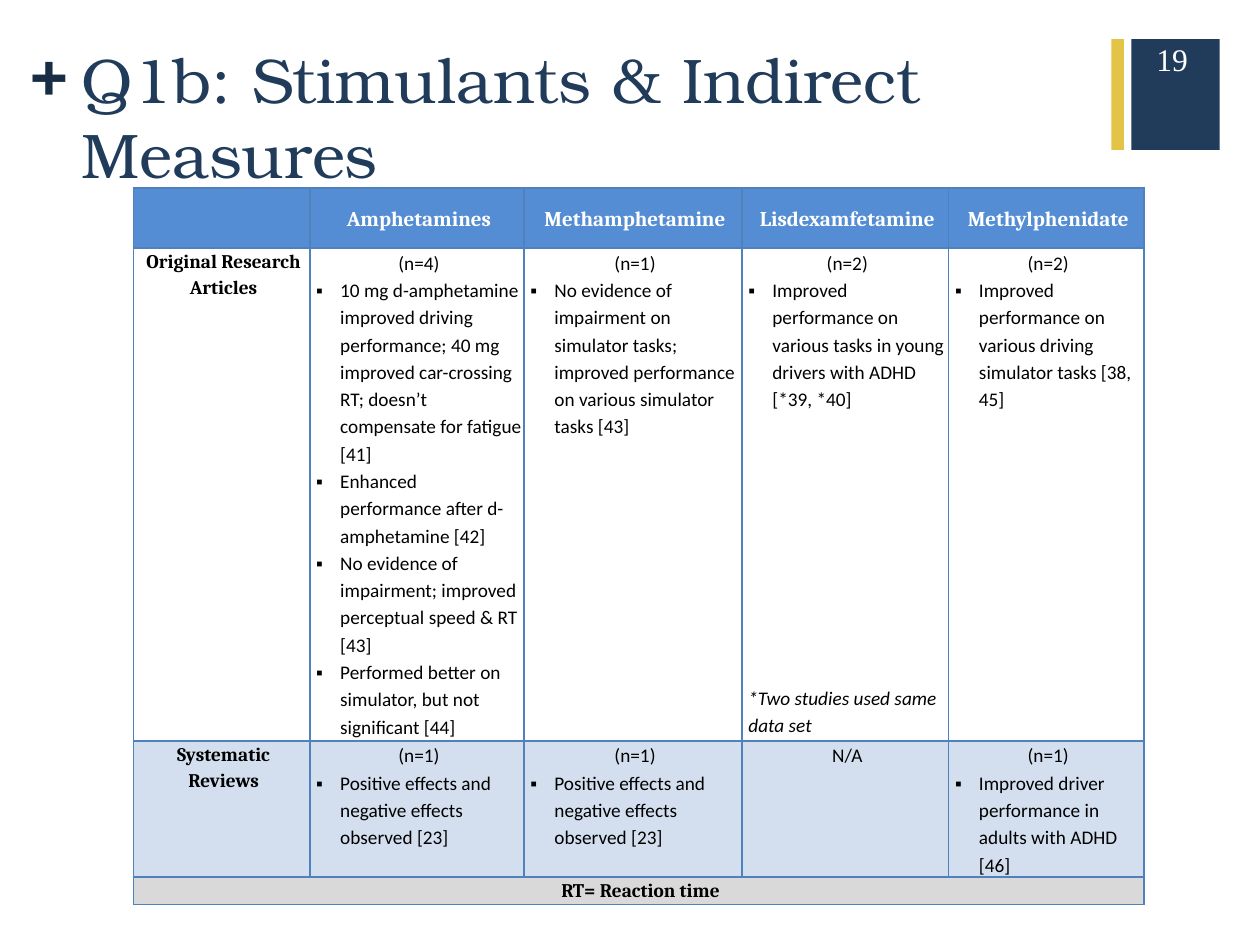
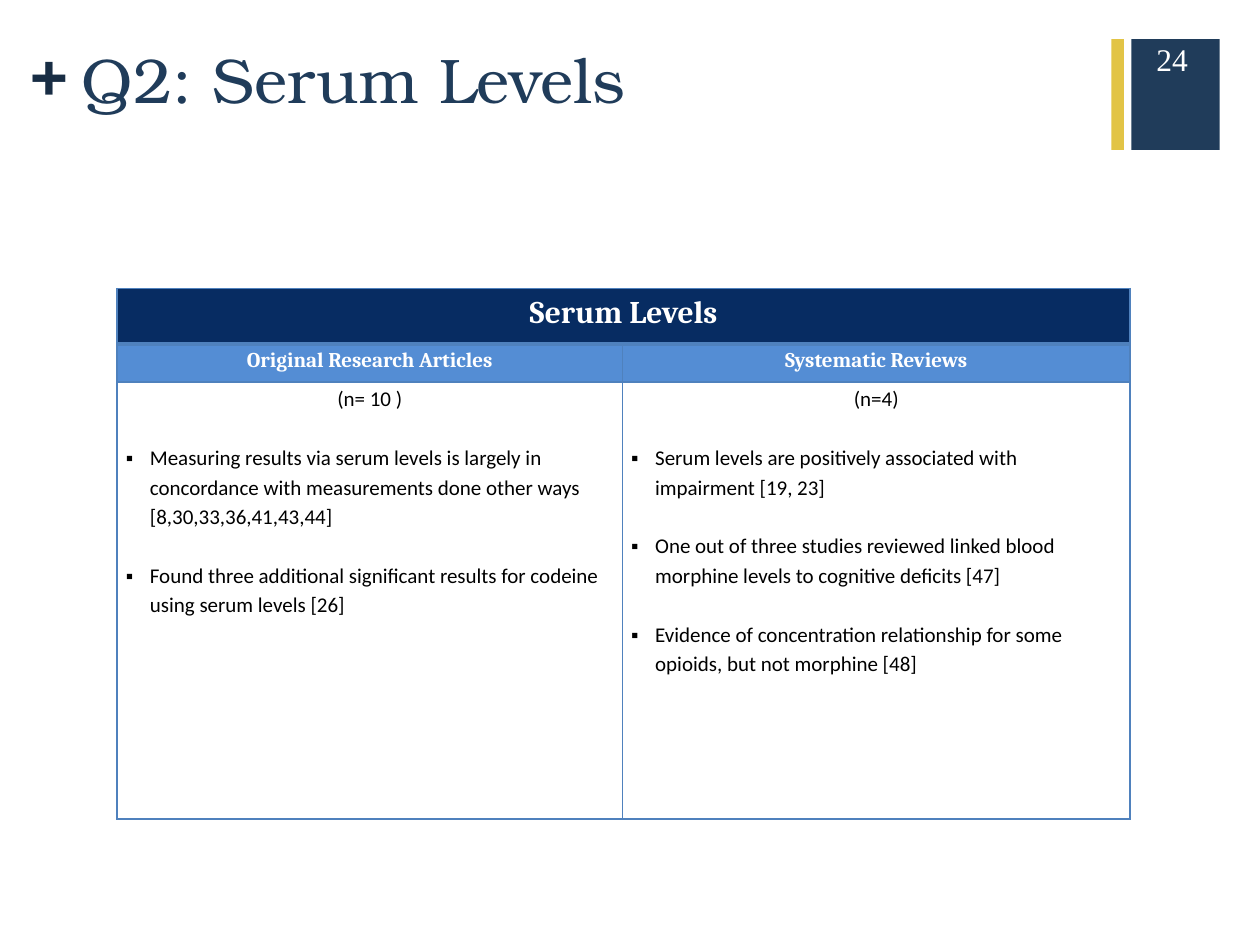
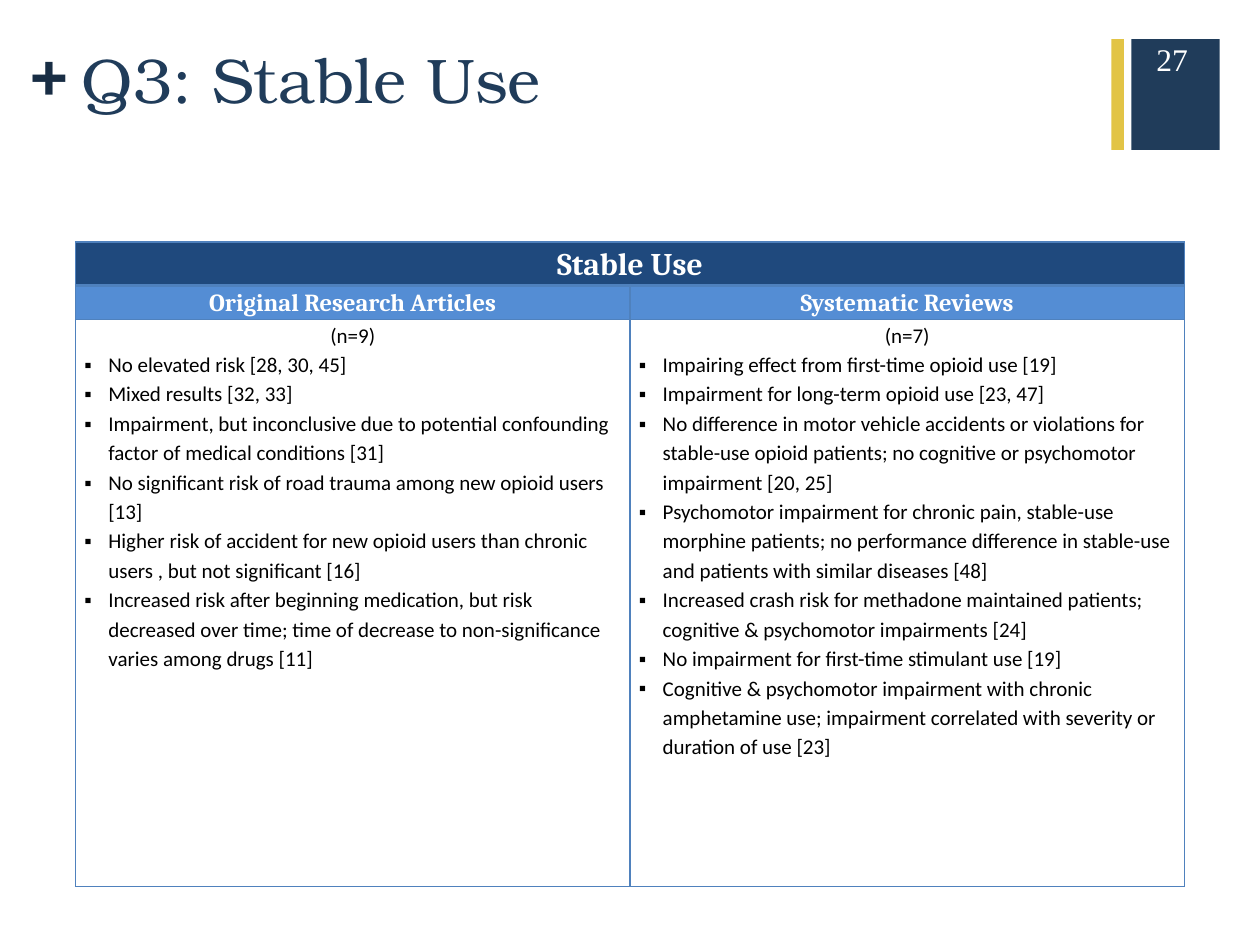
from pptx import Presentation
from pptx.dml.color import RGBColor
from pptx.enum.shapes import MSO_SHAPE
from pptx.enum.text import MSO_ANCHOR, MSO_AUTO_SIZE, PP_ALIGN
from pptx.oxml.ns import qn
from pptx.util import Inches, Pt
from lxml.etree import SubElement

NAVY, PLUS, GOLD, WHITE, BLACK = "203C5A", "182D44", "E2C446", "FFFFFF", "000000"
HEADER, BORDER, PALE, GREY = "548DD4", "4F81BD", "D3DFEE", "D9D9D9"
DISPLAY, HEADING, BODY, NUMBER = "TeX Gyre Bonum", "Cambria", "Calibri", "Times New Roman"


def color(value):
    return RGBColor.from_string(value)


class Page:
    def __init__(self, deck, title, number):
        self.slide = deck.slides.add_slide(deck.slide_layouts[5])
        self.band(8.98, 0.7, NAVY)
        self.text(0.24, 0.25, 0.28, 0.61, "+", 36, DISPLAY, PLUS, bold=True, margin=0)
        self.band(8.82, 0.1, GOLD)
        self.title(title)
        self.text(9.08, 0.27, 0.61, 0.4, number, 18, NUMBER, WHITE)

    def format(self, para, size, font, shade, bold=False, italic=False):
        for span in para.runs:
            span.font.size = Pt(size)
            span.font.name = font
            span.font.color.rgb = color(shade)
            span.font.bold = bold
            span.font.italic = italic

    def band(self, left, width, fill):
        box = self.slide.shapes.add_shape(
            MSO_SHAPE.RECTANGLE, Inches(left), Inches(0.31), Inches(width), Inches(0.88))
        box.shadow.inherit = False
        box.fill.solid()
        box.fill.fore_color.rgb = color(fill)
        box.line.fill.background()

    def text(self, left, top, width, height, words, size, font, shade, bold=False, margin=None):
        box = self.slide.shapes.add_textbox(
            Inches(left), Inches(top), Inches(width), Inches(height))
        frame = box.text_frame
        frame.word_wrap = True
        if margin is not None:
            frame.margin_left = frame.margin_right = Inches(margin)
            frame.margin_top = frame.margin_bottom = Inches(margin)
        frame.text = words
        self.format(frame.paragraphs[0], size, font, shade, bold)

    def title(self, words):
        box = self.slide.shapes.title
        box.left, box.top = Inches(0.55), Inches(0.27)
        box.width, box.height = Inches(8.26), Inches(0.65)
        frame = box.text_frame
        frame.text = words
        frame.word_wrap = True
        frame.auto_size = MSO_AUTO_SIZE.NONE
        frame.vertical_anchor = MSO_ANCHOR.TOP
        frame.paragraphs[0].alignment = PP_ALIGN.LEFT
        self.format(frame.paragraphs[0], 36, DISPLAY, NAVY)

    def table(self, left, top, widths, heights, before, after, head=0):
        frame = self.slide.shapes.add_table(
            len(heights), len(widths), Inches(left), Inches(top),
            Inches(sum(widths)), Inches(sum(heights)))
        table = frame.table
        table.first_row = table.horz_banding = False
        for column, width in zip(table.columns, widths):
            column.width = Inches(width)
        for row, height in zip(table.rows, heights):
            row.height = Inches(height)
        for cell in table.iter_cells():
            cell.margin_left, cell.margin_right = Inches(before), Inches(after)
            cell.margin_top, cell.margin_bottom = Inches(head), 0
            cell.fill.background()
            self.borders(cell)
        return table

    def borders(self, cell, bottom=1):
        properties = cell._tc.get_or_add_tcPr()
        for index, (side, width) in enumerate(
                {"lnL": 1, "lnR": 1, "lnT": 1, "lnB": bottom}.items()):
            for old in properties.findall(qn(f"a:{side}")):
                properties.remove(old)
            line = SubElement(properties, qn(f"a:{side}"), w=str(Pt(width)))
            SubElement(SubElement(line, qn("a:solidFill")), qn("a:srgbClr"), val=BORDER)
            properties.insert(index, line)

    def fill(self, cell, shade):
        cell.fill.solid()
        cell.fill.fore_color.rgb = color(shade)

    def heading(self, cell, words, size, shade=WHITE, fill=None):
        cell.text_frame.text = words
        para = cell.text_frame.paragraphs[0]
        para.alignment = PP_ALIGN.CENTER
        para.line_spacing = 1.15
        self.format(para, size, HEADING, shade, bold=True)
        if fill:
            self.fill(cell, fill)

    def findings(self, cell, count, points, size, gap=0):
        frame = cell.text_frame
        frame.text = count
        frame.paragraphs[0].alignment = PP_ALIGN.CENTER
        for point in points:
            para = frame.add_paragraph()
            para.text = point
            para.space_before = Pt(gap)
            self.bullet(para)
        for para in frame.paragraphs:
            para.line_spacing = 1.15
            self.format(para, size, BODY, BLACK)

    def bullet(self, para):
        properties = para._p.get_or_add_pPr()
        properties.set("marL", str(Inches(0.19)))
        properties.set("indent", str(-Inches(0.19)))
        SubElement(properties, qn("a:buFont"), typeface=NUMBER)
        SubElement(properties, qn("a:buChar"), char="▪")

    def footnote(self, cell, words, size, gap):
        para = cell.text_frame.add_paragraph()
        para.text = words
        para.line_spacing = 1.15
        para.space_before = Pt(gap)
        self.format(para, size, BODY, BLACK, italic=True)

    def comparison(self, table, name, fill, size, columns, gap=0):
        banner = table.cell(0, 0)
        banner.merge(table.cell(0, 1))
        self.heading(banner, name, 18, fill=fill)
        for index, (header, count, points) in enumerate(columns):
            self.borders(table.cell(0, index), bottom=2.25)
            self.heading(table.cell(1, index), header, size, fill=HEADER)
            self.findings(table.cell(2, index), count, points, 12, gap)


def stimulants(deck):
    page = Page(deck, "Q1b: Stimulants & Indirect Measures", "19")
    table = page.table(
        1.06, 1.49, [1.4, 1.7, 1.73, 1.64, 1.55], [0.48, 3.91, 1.08, 0.22], 0.05, 0.02)
    mixed = ("(n=1)", ["Positive effects and negative effects observed [23]"])
    drugs = [
        ("Amphetamines", ("(n=4)", [
            "10 mg d-amphetamine improved driving performance; 40 mg improved car-crossing RT; "
            "doesn’t compensate for fatigue [41]",
            "Enhanced performance after d-amphetamine [42]",
            "No evidence of impairment; improved perceptual speed & RT [43]",
            "Performed better on simulator, but not significant [44]"]), mixed),
        ("Methamphetamine", ("(n=1)", [
            "No evidence of impairment on simulator tasks; improved performance on various "
            "simulator tasks [43]"]), mixed),
        ("Lisdexamfetamine", ("(n=2)", [
            "Improved performance on various tasks in young drivers with ADHD [*39, *40]"]),
            ("N/A", [])),
        ("Methylphenidate", ("(n=2)", [
            "Improved performance on various driving simulator tasks [38, 45]"]),
            ("(n=1)", ["Improved driver performance in adults with ADHD [46]"])),
    ]
    page.fill(table.cell(0, 0), HEADER)
    page.heading(table.cell(1, 0), "Original Research Articles", 11, BLACK)
    page.heading(table.cell(2, 0), "Systematic Reviews", 11, BLACK, PALE)
    for column, (drug, articles, reviews) in enumerate(drugs, 1):
        header = table.cell(0, column)
        page.heading(header, drug, 12, fill=HEADER)
        header.vertical_anchor = MSO_ANCHOR.MIDDLE
        page.findings(table.cell(1, column), *articles, 11)
        page.findings(table.cell(2, column), *reviews, 11)
        page.fill(table.cell(2, column), PALE)
    page.footnote(table.cell(1, 3), "*Two studies used same data set", 11, 155)
    legend = table.cell(3, 0)
    legend.merge(table.cell(3, 4))
    page.heading(legend, "RT= Reaction time", 11, BLACK, GREY)


def serum_levels(deck):
    page = Page(deck, "Q2: Serum Levels", "24")
    table = page.table(0.93, 2.29, [4.01, 4.03], [0.44, 0.3, 3.47], 0.07, 0.07, 0.01)
    page.comparison(table, "Serum Levels", "072C62", 12, [
        ("Original Research Articles", "(n= 10 )", [
            "Measuring results via serum levels is largely in concordance with measurements "
            "done other ways [8,30,33,36,41,43,44]",
            "Found three additional significant results for codeine using serum levels [26]"]),
        ("Systematic Reviews", "(n=4)", [
            "Serum levels are positively associated with impairment [19, 23]",
            "One out of three studies reviewed linked blood morphine levels to cognitive "
            "deficits [47]",
            "Evidence of concentration relationship for some opioids, but not morphine [48]"]),
    ], gap=16.8)


def stable_use(deck):
    page = Page(deck, "Q3: Stable Use", "27")
    table = page.table(0.6, 1.92, [4.4, 4.4], [0.34, 0.22, 4.5], 0.07, 0.07)
    page.comparison(table, "Stable Use", "1F497D", 14, [
        ("Original Research Articles", "(n=9)", [
            "No elevated risk [28, 30, 45]",
            "Mixed results [32, 33]",
            "Impairment, but inconclusive due to potential confounding factor of medical "
            "conditions [31]",
            "No significant risk of road trauma among new opioid users [13]",
            "Higher risk of accident for new opioid users than chronic users , but not "
            "significant [16]",
            "Increased risk after beginning medication, but risk decreased over time; time of "
            "decrease to non-significance varies among drugs [11]"]),
        ("Systematic Reviews", "(n=7)", [
            "Impairing effect from first-time opioid use [19]",
            "Impairment for long-term opioid use [23, 47]",
            "No difference in motor vehicle accidents or violations for stable-use opioid "
            "patients; no cognitive or psychomotor impairment [20, 25]",
            "Psychomotor impairment for chronic pain, stable-use morphine patients; no "
            "performance difference in stable-use and patients with similar diseases [48]",
            "Increased crash risk for methadone maintained patients; cognitive & psychomotor "
            "impairments [24]",
            "No impairment for first-time stimulant use [19]",
            "Cognitive & psychomotor impairment with chronic amphetamine use; impairment "
            "correlated with severity or duration of use [23]"]),
    ])


def main():
    deck = Presentation()
    deck.slide_width, deck.slide_height = Inches(10), Inches(7.5)
    stimulants(deck)
    serum_levels(deck)
    stable_use(deck)
    deck.save("out.pptx")


if __name__ == "__main__":
    main()
